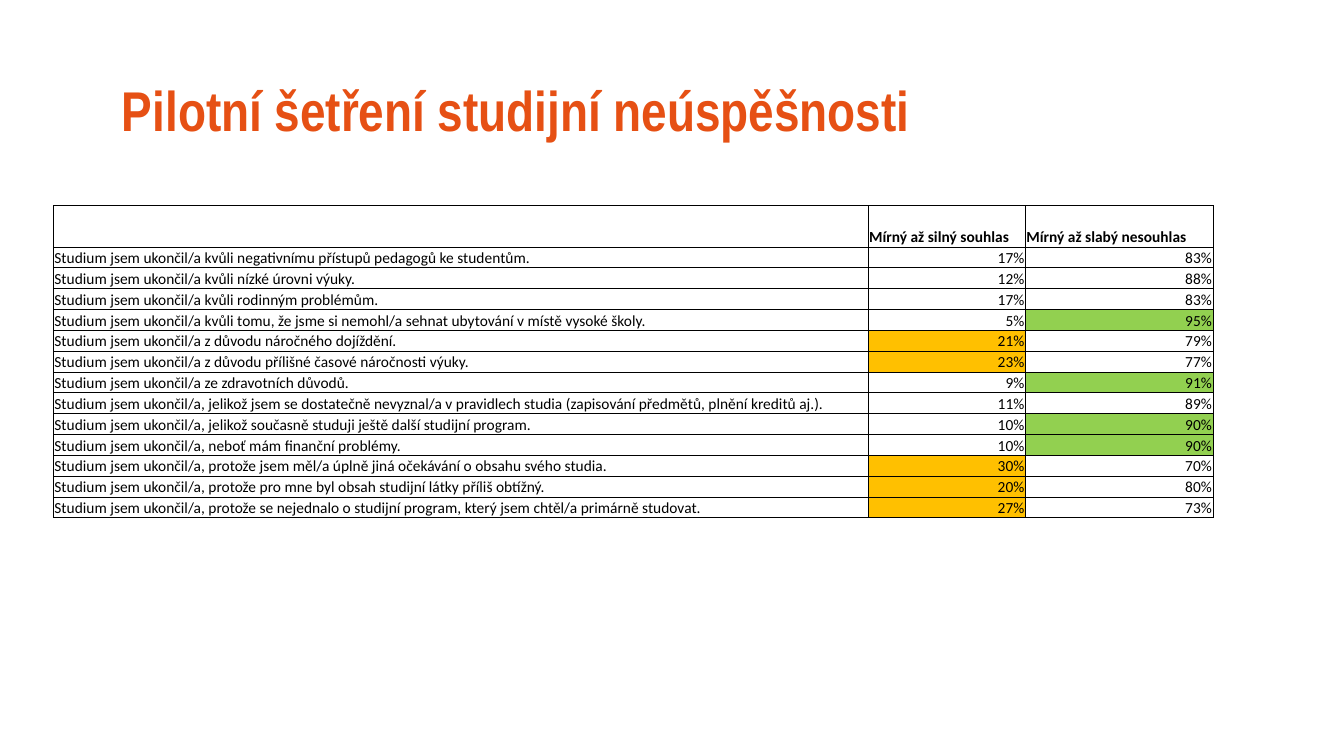
from lxml.etree import SubElement
from pptx import Presentation
from pptx.dml.color import RGBColor
from pptx.enum.text import MSO_ANCHOR, MSO_AUTO_SIZE, PP_ALIGN
from pptx.oxml.ns import qn
from pptx.util import Pt

PX = 9144  # EMU per px, 100 px to the inch
COLORS = {"title": "E65014", "text": "000000", "border": "000000",
          "agree": "FFC000", "disagree": "92D050"}
AGREE_MIN, DISAGREE_MIN = 20, 90  # highlighting thresholds in per cent

HEADERS = ["", "Mírný až silný souhlas", "Mírný až slabý nesouhlas"]
REASONS = [  # the reason follows "Studium jsem ukončil/a"
    (" kvůli negativnímu přístupů pedagogů ke studentům.", 17),
    (" kvůli nízké úrovni výuky.", 12),
    (" kvůli rodinným problémům.", 17),
    (" kvůli tomu, že jsme si nemohl/a sehnat ubytování v místě vysoké školy.", 5),
    (" z důvodu náročného dojíždění.", 21),
    (" z důvodu přílišné časové náročnosti výuky.", 23),
    (" ze zdravotních důvodů.", 9),
    (", jelikož jsem se dostatečně nevyznal/a v pravidlech studia "
     "(zapisování předmětů, plnění kreditů aj.).", 11),
    (", jelikož současně studuji ještě další studijní program.", 10),
    (", neboť mám finanční problémy.", 10),
    (", protože jsem měl/a úplně jiná očekávání o obsahu svého studia.", 30),
    (", protože pro mne byl obsah studijní látky příliš obtížný.", 20),
    (", protože se nejednalo o studijní program, který jsem chtěl/a primárně studovat.", 27),
]


def rgb(name):
    return RGBColor.from_string(COLORS[name])


def style_font(font, name, size, color, bold):
    font.name, font.size, font.bold = name, Pt(size), bold
    font.color.rgb = rgb(color)


def add_title(s, text, x, y, w, h):
    sp = s.shapes.title
    sp.left, sp.top, sp.width, sp.height = (v * PX for v in (x, y, w, h))
    tf = sp.text_frame
    tf.text = text
    tf.word_wrap = True
    tf.auto_size = MSO_AUTO_SIZE.NONE
    tf.vertical_anchor = MSO_ANCHOR.MIDDLE
    p = tf.paragraphs[0]
    p.alignment, p.line_spacing = PP_ALIGN.LEFT, 0.9
    style_font(p.runs[0].font, "Arial Narrow", 40, "title", True)


def add_borders(cell):
    tcPr = cell._tc.get_or_add_tcPr()
    for side in ("a:lnL", "a:lnR", "a:lnT", "a:lnB"):
        ln = SubElement(tcPr, qn(side), w=str(Pt(0.5)))
        fill = SubElement(ln, qn("a:solidFill"))
        SubElement(fill, qn("a:srgbClr"), val=COLORS["border"])


def fill_cell(cell, text, bold=False, align=PP_ALIGN.LEFT, fill=None):
    cell.margin_left = cell.margin_right = cell.margin_top = PX
    cell.margin_bottom = 0
    cell.vertical_anchor = MSO_ANCHOR.BOTTOM
    add_borders(cell)
    if fill:
        cell.fill.solid()
        cell.fill.fore_color.rgb = rgb(fill)
    else:
        cell.fill.background()
    p = cell.text_frame.paragraphs[0]
    p.text = text
    p.alignment = align
    style_font(p.font, "Calibri", 11, "text", bold)
    for r in p.runs:
        style_font(r.font, "Calibri", 11, "text", bold)


def add_survey_table(s, x, y, w, h):
    table = s.shapes.add_table(len(REASONS) + 1, len(HEADERS),
                               x * PX, y * PX, w * PX, h * PX).table
    table.first_row = table.horz_banding = False

    # Column widths and row heights
    agree_w, disagree_w, header_h = 156, 186, 41
    for col, width in zip(table.columns, (w - agree_w - disagree_w, agree_w, disagree_w)):
        col.width = width * PX
    for row in table.rows:
        row.height = (h - header_h) * PX // len(REASONS)
    table.rows[0].height = header_h * PX

    # Header row
    for c, text in enumerate(HEADERS):
        fill_cell(table.cell(0, c), text, bold=True)

    # Reasons with their shares; the two shares add up to 100 %
    for i, (reason, agree) in enumerate(REASONS, 1):
        disagree = 100 - agree
        fill_cell(table.cell(i, 0), "Studium jsem ukončil/a" + reason)
        fill_cell(table.cell(i, 1), f"{agree}%", align=PP_ALIGN.RIGHT,
                  fill="agree" if agree >= AGREE_MIN else None)
        fill_cell(table.cell(i, 2), f"{disagree}%", align=PP_ALIGN.RIGHT,
                  fill="disagree" if disagree >= DISAGREE_MIN else None)


def main():
    prs = Presentation()
    prs.slide_width, prs.slide_height = 1333 * PX, 750 * PX
    s = prs.slides.add_slide(prs.slide_layouts[5])
    add_title(s, "Pilotní šetření studijní neúspěšnosti", 111, 40, 1131, 145)
    add_survey_table(s, 53, 204, 1150, 310)
    prs.save("out.pptx")


if __name__ == "__main__":
    main()
